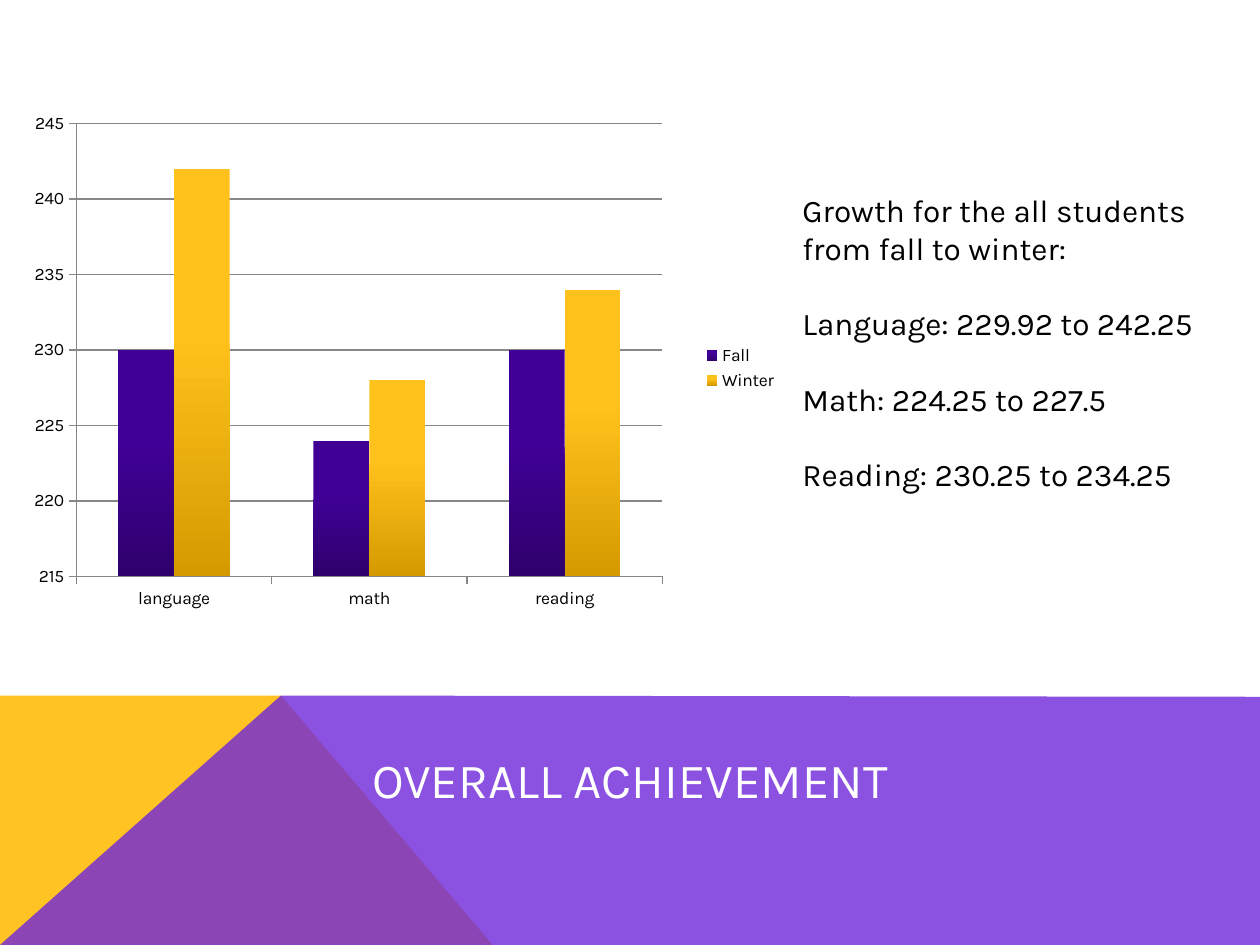
from dataclasses import dataclass

from lxml.etree import SubElement
from pptx import Presentation
from pptx.chart.data import CategoryChartData
from pptx.dml.color import RGBColor
from pptx.enum.chart import XL_CHART_TYPE as ChartType
from pptx.enum.chart import XL_LEGEND_POSITION as LegendPosition
from pptx.enum.chart import XL_TICK_MARK as TickMark
from pptx.enum.text import MSO_ANCHOR as Anchor
from pptx.enum.text import PP_ALIGN as Align
from pptx.oxml.ns import qn
from pptx.util import Inches, Pt

FONT = "Karla"
BLACK = RGBColor(0x00, 0x00, 0x00)
WHITE = RGBColor(0xFF, 0xFF, 0xFF)
GRAY = RGBColor(0x87, 0x87, 0x87)
GOLD = RGBColor(0xFF, 0xC4, 0x24)
VIOLET = RGBColor(0x6F, 0x26, 0xD9)
BAND_TOP = 5.52


@dataclass(frozen=True)
class Band:
    points: tuple[tuple[float, float], ...]
    color: RGBColor
    opacity: int = 100


@dataclass(frozen=True)
class TextBlock:
    box: tuple[float, float, float, float]
    lines: tuple[str, ...]
    size: int
    color: RGBColor
    align: Align = Align.LEFT
    anchor: Anchor = Anchor.TOP
    gap: float = 0


@dataclass(frozen=True)
class Term:
    name: str
    values: tuple[int, ...]
    top_color: RGBColor
    bottom_color: RGBColor


BANDS = (
    Band(((0, 7.5), (0, BAND_TOP), (2.23, BAND_TOP), (3.91, 7.5)), GOLD),
    Band(((0, 7.5), (2.23, BAND_TOP), (10, 5.53), (10, 7.5)), VIOLET, 80),
)
TEXT_BLOCKS = (
    TextBlock((0, 5.88, 10, 0.6), ("OVERALL ACHIEVEMENT",), 28, WHITE,
              Align.CENTER, Anchor.MIDDLE),
    TextBlock((6.27, 1.47, 3.73, 2.52),
              ("Growth for the all students from fall to winter:",
               "Language: 229.92 to 242.25",
               "Math: 224.25 to 227.5",
               "Reading: 230.25 to 234.25"), 18, BLACK, gap=21.4),
)
SUBJECTS = ("language", "math", "reading")
TERMS = (
    Term("Fall", (230, 224, 230),
         RGBColor(0x40, 0x00, 0x96), RGBColor(0x2E, 0x00, 0x6C)),
    Term("Winter", (242, 228, 234),
         RGBColor(0xFF, 0xC2, 0x1C), RGBColor(0xD4, 0x9A, 0x00)),
)
PLOT_LAYOUT = {"x": 0.05, "y": 0.02, "w": 0.78, "h": 0.89}


def draw_band(slide, band: Band) -> None:
    start, *rest = [(Inches(x), Inches(y)) for x, y in band.points]
    builder = slide.shapes.build_freeform(*start)
    builder.add_line_segments(rest, close=True)
    shape = builder.convert_to_shape()
    shape.shadow.inherit = False
    shape.line.fill.background()
    shape.fill.solid()
    shape.fill.fore_color.rgb = band.color
    if band.opacity < 100:
        color = shape.fill._xPr.find(qn("a:solidFill"))[0]
        SubElement(color, qn("a:alpha"), val=str(band.opacity * 1000))


def draw_text(slide, block: TextBlock) -> None:
    frame = slide.shapes.add_textbox(*map(Inches, block.box)).text_frame
    frame.word_wrap = True
    frame.vertical_anchor = block.anchor
    for index, line in enumerate(block.lines):
        paragraph = frame.add_paragraph() if index else frame.paragraphs[0]
        paragraph.alignment = block.align
        paragraph.space_before = Pt(block.gap if index else 0)
        run = paragraph.add_run()
        run.text = line
        run.font.name = FONT
        run.font.size = Pt(block.size)
        run.font.color.rgb = block.color


def place_plot(chart) -> None:
    plot_area = chart._chartSpace.chart.plotArea
    layout = plot_area.find(qn("c:layout"))
    if layout is None:
        layout = SubElement(plot_area, qn("c:layout"))
        plot_area.insert(0, layout)
    manual = SubElement(layout, qn("c:manualLayout"))
    SubElement(manual, qn("c:layoutTarget"), val="inner")
    for side in "xy":
        SubElement(manual, qn(f"c:{side}Mode"), val="edge")
    for side, share in PLOT_LAYOUT.items():
        SubElement(manual, qn(f"c:{side}"), val=str(share))


def draw_chart(slide) -> None:
    data = CategoryChartData(number_format="General")
    data.categories = SUBJECTS
    for term in TERMS:
        data.add_series(term.name, term.values)
    box = map(Inches, (0.27, 0.9, 6, 4.04))
    chart = slide.shapes.add_chart(ChartType.COLUMN_CLUSTERED, *box, data).chart
    chart.has_title = False
    chart.font.name = FONT
    chart.font.size = Pt(10)
    chart.font.color.rgb = BLACK
    chart.has_legend = True
    chart.legend.position = LegendPosition.RIGHT
    chart.legend.include_in_layout = False
    place_plot(chart)

    value_axis = chart.value_axis
    value_axis.minimum_scale = 215
    value_axis.maximum_scale = 245
    value_axis.major_unit = 5
    value_axis.has_major_gridlines = True
    for axis in (chart.category_axis, value_axis):
        axis.major_tick_mark = TickMark.OUTSIDE
        axis.minor_tick_mark = TickMark.NONE
    for item in (chart.category_axis, value_axis, value_axis.major_gridlines):
        item.format.line.color.rgb = GRAY
        item.format.line.width = Pt(0.75)

    plot = chart.plots[0]
    plot.gap_width = 150
    plot.overlap = 0
    plot.vary_by_categories = False
    for series, term in zip(plot.series, TERMS):
        series.invert_if_negative = False
        fill = series.format.fill
        fill.gradient()
        fill.gradient_angle = 270
        stops = zip(fill.gradient_stops, (0.4, 1), (term.top_color, term.bottom_color))
        for stop, position, color in stops:
            stop.position = position
            stop.color.rgb = color


def main() -> None:
    presentation = Presentation()
    presentation.slide_width = Inches(10)
    presentation.slide_height = Inches(7.5)
    slide = presentation.slides.add_slide(presentation.slide_layouts[6])
    for band in BANDS:
        draw_band(slide, band)
    for block in TEXT_BLOCKS:
        draw_text(slide, block)
    draw_chart(slide)
    presentation.save("out.pptx")


if __name__ == "__main__":
    main()
